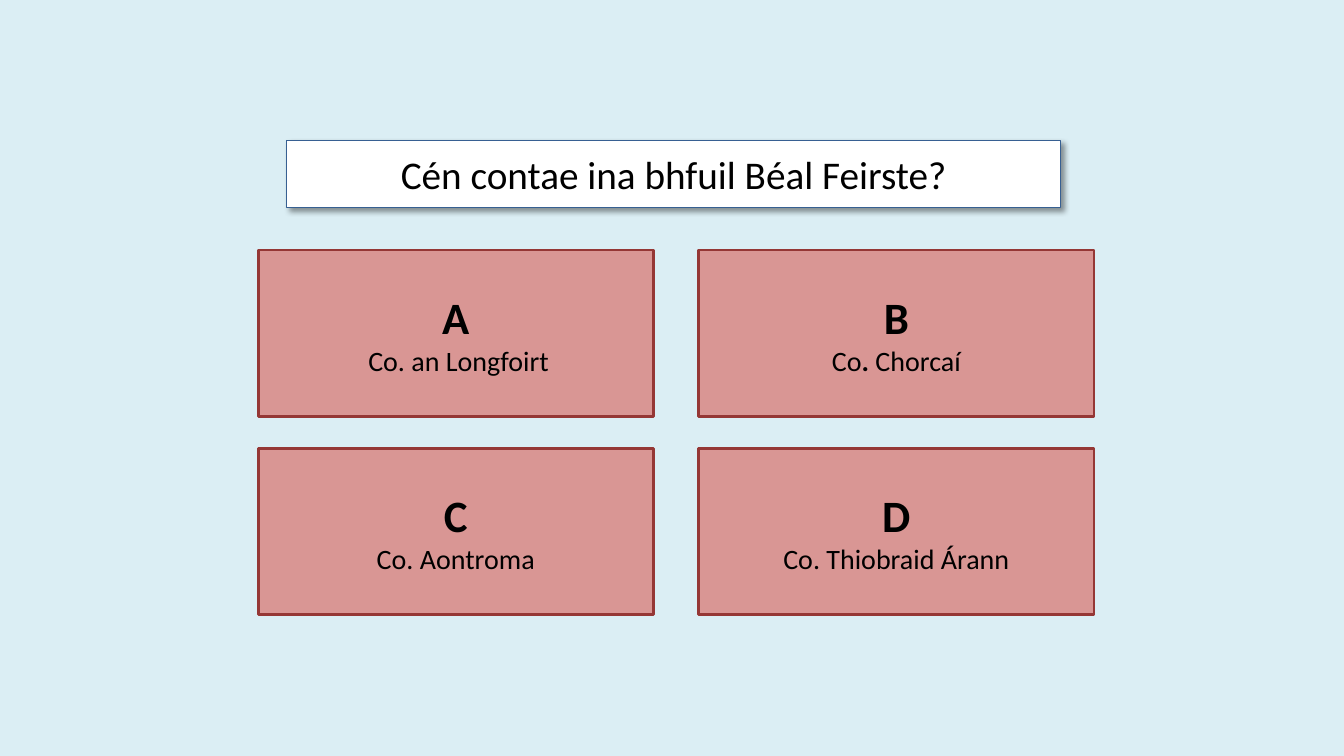
from dataclasses import dataclass

from lxml.etree import SubElement
from pptx import Presentation
from pptx.dml.color import RGBColor as Rgb
from pptx.enum.shapes import MSO_SHAPE as Preset
from pptx.enum.text import MSO_ANCHOR as Anchor, MSO_AUTO_SIZE as AutoSize, PP_ALIGN as Align
from pptx.oxml.ns import qn
from pptx.util import Inches, Pt


@dataclass(frozen=True)
class Theme:
    font: str = "Calibri"
    background: str = "DBEEF4"
    ink: str = "000000"
    question_fill: str = "FFFFFF"
    question_line: str = "376092"
    answer_fill: str = "D99694"
    answer_line: str = "953735"
    question_size: float = 28
    letter_size: float = 32
    answer_size: float = 20
    gap_size: float = 18


@dataclass(frozen=True)
class Grid:
    left: float = 2.56
    top: float = 2.48
    width: float = 3.92
    height: float = 1.65
    column_step: float = 4.37
    row_step: float = 1.97
    columns: int = 2

    def cell(self, index):
        row, column = divmod(index, self.columns)
        return (self.left + column * self.column_step,
                self.top + row * self.row_step, self.width, self.height)


THEME = Theme()
GRID = Grid()
QUESTION = "Cén contae ina bhfuil Béal Feirste?"
ANSWERS = {
    "A": [(" ", THEME.gap_size, True), ("Co. an Longfoirt", THEME.answer_size, False)],
    "B": [("Co", THEME.answer_size, False), (". ", THEME.answer_size, True),
          ("Chorcaí", THEME.answer_size, False)],
    "C": [("Co. Aontroma", THEME.answer_size, False)],
    "D": [("Co. Thiobraid Árann", THEME.answer_size, False)],
}


def paint(box, fill, line, width):
    box.fill.solid()
    box.fill.fore_color.rgb = Rgb.from_string(fill)
    box.line.color.rgb = Rgb.from_string(line)
    box.line.width = Pt(width)


def add_run(para, text, size, bold=False):
    span = para.add_run()
    span.text = text
    span.font.name = THEME.font
    span.font.size = Pt(size)
    span.font.bold = bold
    span.font.color.rgb = Rgb.from_string(THEME.ink)


def cast_shadow(box):
    effects = SubElement(box.element.spPr, qn("a:effectLst"))
    shadow = SubElement(effects, qn("a:outerShdw"), blurRad=str(Pt(4)), dist=str(Pt(3)),
                        dir="2700000", algn="tl", rotWithShape="0")
    color = SubElement(shadow, qn("a:srgbClr"), val=THEME.ink)
    SubElement(color, qn("a:alpha"), val="40000")


def format_question(box):
    box.left, box.top, box.width, box.height = map(Inches, (2.84, 1.39, 7.68, 0.67))
    paint(box, THEME.question_fill, THEME.question_line, 0.75)
    cast_shadow(box)
    frame = box.text_frame
    frame.auto_size = AutoSize.NONE
    frame.vertical_anchor = Anchor.MIDDLE
    para = frame.paragraphs[0]
    para.alignment = Align.CENTER
    para.space_before = Pt(0.2 * THEME.question_size)
    add_run(para, QUESTION, THEME.question_size)


def add_answer(page, index, letter, spans):
    box = page.shapes.add_shape(Preset.RECTANGLE, *map(Inches, GRID.cell(index)))
    box.shadow.inherit = False
    paint(box, THEME.answer_fill, THEME.answer_line, 2)
    frame = box.text_frame
    frame.word_wrap = True
    frame.vertical_anchor = Anchor.MIDDLE
    heading, answer = frame.paragraphs[0], frame.add_paragraph()
    heading.alignment = answer.alignment = Align.CENTER
    add_run(heading, letter, THEME.letter_size, True)
    for span in spans:
        add_run(answer, *span)


def main():
    deck = Presentation()
    deck.slide_width, deck.slide_height = Inches(13.33), Inches(7.5)
    page = deck.slides.add_slide(deck.slide_layouts.get_by_name("Title Only"))
    page.background.fill.solid()
    page.background.fill.fore_color.rgb = Rgb.from_string(THEME.background)
    format_question(page.shapes.title)
    for index, (letter, spans) in enumerate(ANSWERS.items()):
        add_answer(page, index, letter, spans)
    deck.save("out.pptx")


if __name__ == "__main__":
    main()
